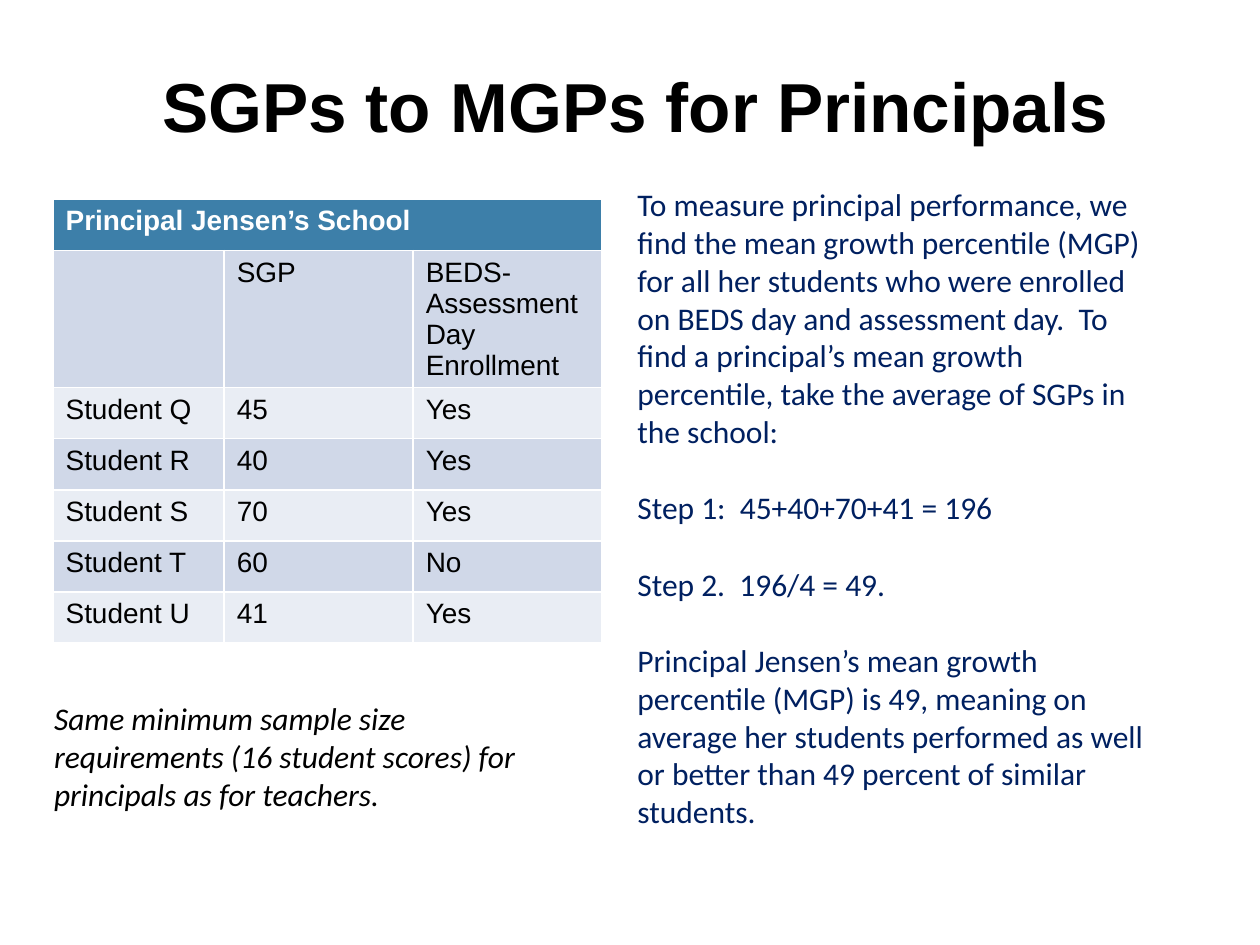
from pptx import Presentation
from pptx.dml.color import RGBColor
from pptx.enum.text import MSO_ANCHOR, PP_ALIGN
from pptx.util import Cm, Pt

BLACK = RGBColor(0x00, 0x00, 0x00)
WHITE = RGBColor(0xFF, 0xFF, 0xFF)
NAVY = RGBColor(0x00, 0x20, 0x60)
HEADER_BLUE = RGBColor(0x3D, 0x7F, 0xA9)
BANDS = (RGBColor(0xE9, 0xED, 0xF4), RGBColor(0xD0, 0xD8, 0xE8))
BOTTOM, TOP = MSO_ANCHOR.BOTTOM, MSO_ANCHOR.TOP
CENTER = PP_ALIGN.CENTER
TITLE_ONLY = 5

# Content
TITLE = "SGPs to MGPs for Principals"
TABLE_ROWS = [
    ("Principal Jensen’s School", "", ""),
    ("", "SGP", "BEDS-Assessment Day Enrollment"),
    ("Student Q", "45", "Yes"),
    ("Student R", "40", "Yes"),
    ("Student S", "70", "Yes"),
    ("Student T", "60", "No"),
    ("Student U", "41", "Yes"),
]
SAMPLE_NOTE = [
    "Same minimum sample size requirements (16 student scores) for "
    "principals as for teachers.",
]
EXPLANATION = [
    "To measure principal performance, we find the mean growth percentile "
    "(MGP) for all her students who were enrolled on BEDS day and assessment "
    "day.  To find a principal’s mean growth percentile, take the average of "
    "SGPs in the school:",
    "Step 1:  45+40+70+41 = 196",
    "Step 2.  196/4 = 49.",
    "Principal Jensen’s mean growth percentile (MGP) is 49, meaning on "
    "average her students performed as well or better than 49 percent of "
    "similar students.",
]

# Layout
COLUMN_WIDTHS = [Cm(3.45), Cm(3.81), Cm(3.81)]
ROW_HEIGHT, LABEL_ROW_HEIGHT = Cm(1.03), Cm(2.74)
PARAGRAPH_GAP = Pt(22)


def add_run(paragraph, text, font_name, size, color, bold=False, italic=False):
    run = paragraph.add_run()
    run.text = text
    font = run.font
    font.name, font.size = font_name, Pt(size)
    font.bold, font.italic = bold, italic
    font.color.rgb = color


def add_text(slide, paragraphs, left, top, width, height, color, italic=False):
    frame = slide.shapes.add_textbox(left, top, width, height).text_frame
    frame.word_wrap = True
    frame.vertical_anchor = TOP
    for index, text in enumerate(paragraphs):
        paragraph = frame.add_paragraph() if index else frame.paragraphs[0]
        if index:
            paragraph.space_before = PARAGRAPH_GAP
        add_run(paragraph, text, "Calibri", 18, color, italic=italic)


def add_title(slide):
    title = slide.shapes.title
    title.left, title.top = Cm(2.11), Cm(0.71)
    title.width, title.height = Cm(21.41), Cm(2.36)
    title.text_frame.vertical_anchor = BOTTOM
    paragraph = title.text_frame.paragraphs[0]
    paragraph.alignment = CENTER
    paragraph.line_spacing = Pt(36)
    add_run(paragraph, TITLE, "Arial", 39.6, BLACK, bold=True)


def add_score_table(slide):
    heights = [ROW_HEIGHT] * len(TABLE_ROWS)
    heights[1] = LABEL_ROW_HEIGHT
    table = slide.shapes.add_table(
        len(TABLE_ROWS), len(COLUMN_WIDTHS), Cm(1.07), Cm(4.02),
        sum(COLUMN_WIDTHS), sum(heights)).table
    for column, width in zip(table.columns, COLUMN_WIDTHS):
        column.width = width
    for row_index, values in enumerate(TABLE_ROWS):
        table.rows[row_index].height = heights[row_index]
        is_header = row_index == 0
        for column_index, value in enumerate(values):
            cell = table.cell(row_index, column_index)
            cell.fill.solid()
            cell.fill.fore_color.rgb = HEADER_BLUE if is_header else BANDS[row_index % 2]
            paragraph = cell.text_frame.paragraphs[0]
            if value:
                add_run(paragraph, value, "Arial", 16,
                        WHITE if is_header else BLACK, bold=is_header)
            else:
                paragraph.font.size = Pt(16)
    table.cell(0, 0).merge(table.cell(0, len(COLUMN_WIDTHS) - 1))


def main():
    presentation = Presentation()
    presentation.slide_width, presentation.slide_height = Cm(25.4), Cm(19.05)
    slide = presentation.slides.add_slide(presentation.slide_layouts[TITLE_ONLY])

    add_title(slide)
    add_score_table(slide)
    # Note below the table, then the explanation on the right
    add_text(slide, SAMPLE_NOTE, Cm(0.84), Cm(13.97), Cm(11.07), Cm(2.57),
             BLACK, italic=True)
    add_text(slide, EXPLANATION, Cm(12.6), Cm(3.61), Cm(10.95), Cm(14.88), NAVY)

    presentation.save("out.pptx")


if __name__ == "__main__":
    main()
